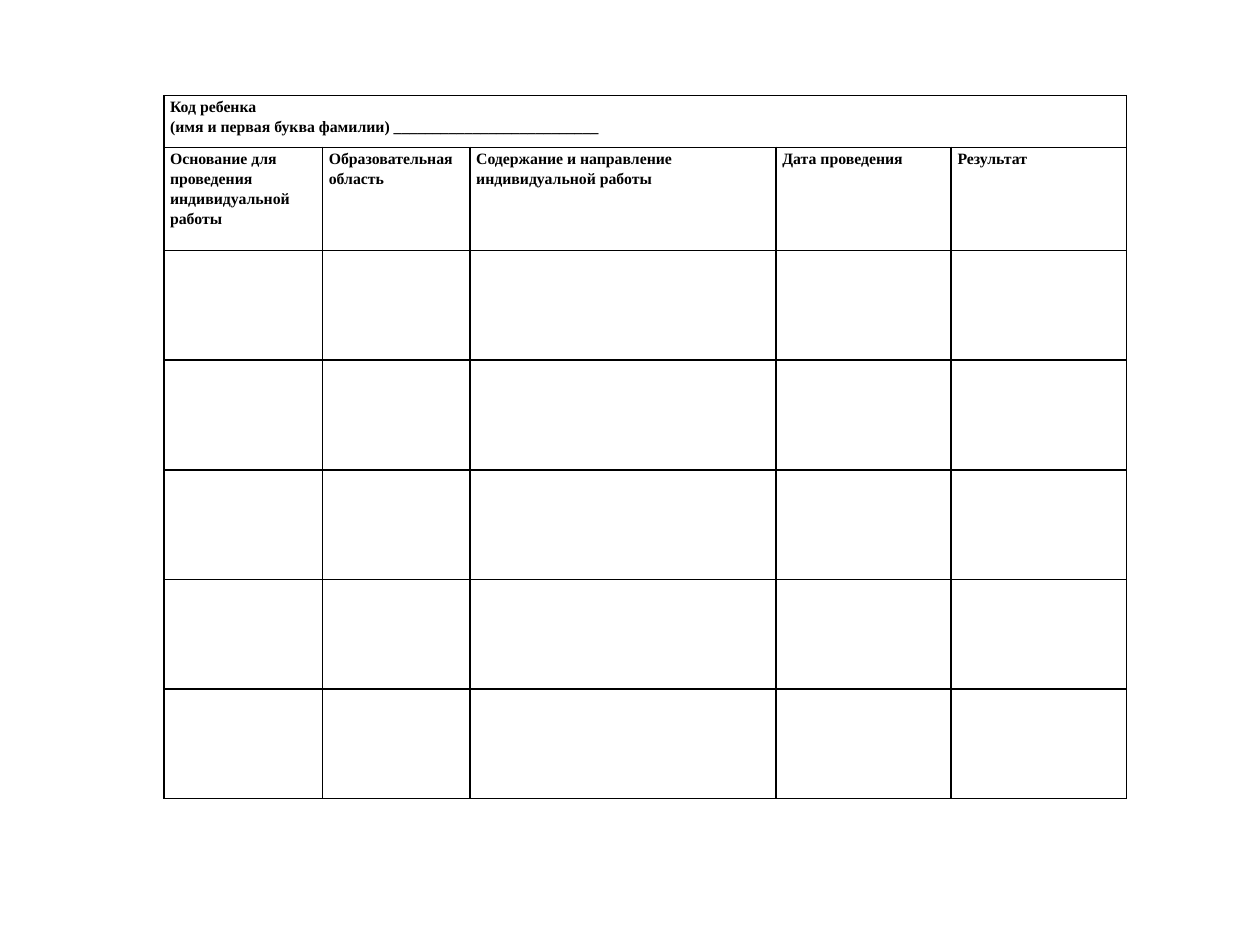
from lxml.etree import SubElement
from pptx import Presentation
from pptx.dml.color import RGBColor
from pptx.oxml.ns import qn
from pptx.util import Inches, Pt

FONT = "Times New Roman"
BLACK = "000000"
COLUMN_WIDTHS = [1.26, 1.17, 2.43, 1.39, 1.39]
ENTRY_ROWS = 5
ROW_HEIGHTS = [0.41, 0.82] + [0.87] * ENTRY_ROWS
CHILD_CODE = "Код ребенка\n(имя и первая буква фамилии) " + "_" * 26
HEADINGS = [
    "Основание для проведения индивидуальной работы",
    "Образовательная\nобласть",
    "Содержание и направление индивидуальной работы",
    "Дата проведения",
    "Результат",
]


def color(hex_value):
    return RGBColor.from_string(hex_value)


def add_borders(cell, hex_value=BLACK, width=1):
    properties = cell._tc.get_or_add_tcPr()
    for side in ("lnL", "lnR", "lnT", "lnB"):
        line = SubElement(properties, qn(f"a:{side}"), w=str(Pt(width)))
        fill = SubElement(line, qn("a:solidFill"))
        SubElement(fill, qn("a:srgbClr"), val=hex_value)


def format_cell(cell):
    cell.margin_left = cell.margin_right = Inches(0.05)
    cell.margin_top = cell.margin_bottom = 0
    add_borders(cell)
    cell.fill.background()


def write_cell(cell, text):
    cell.text = text
    for paragraph in cell.text_frame.paragraphs:
        paragraph.line_spacing = 1.15
        font = paragraph.font
        font.name, font.size, font.bold = FONT, Pt(9), True
        font.color.rgb = color(BLACK)


def add_grid(slide, left, top):
    """Add the empty bordered table and return it."""
    table = slide.shapes.add_table(
        len(ROW_HEIGHTS), len(COLUMN_WIDTHS), Inches(left), Inches(top),
        Inches(sum(COLUMN_WIDTHS)), Inches(sum(ROW_HEIGHTS))).table
    table.first_row = table.horz_banding = False
    for column, width in zip(table.columns, COLUMN_WIDTHS):
        column.width = Inches(width)
    for row, height in zip(table.rows, ROW_HEIGHTS):
        row.height = Inches(height)
    for cell in table.iter_cells():
        format_cell(cell)
    return table


def main():
    presentation = Presentation()
    presentation.slide_width, presentation.slide_height = Inches(10), Inches(7.5)
    slide = presentation.slides.add_slide(presentation.slide_layouts[6])
    table = add_grid(slide, 1.3, 0.76)
    table.cell(0, 0).merge(table.cell(0, len(COLUMN_WIDTHS) - 1))
    write_cell(table.cell(0, 0), CHILD_CODE)
    for column, heading in enumerate(HEADINGS):
        write_cell(table.cell(1, column), heading)
    presentation.save("out.pptx")


if __name__ == "__main__":
    main()
